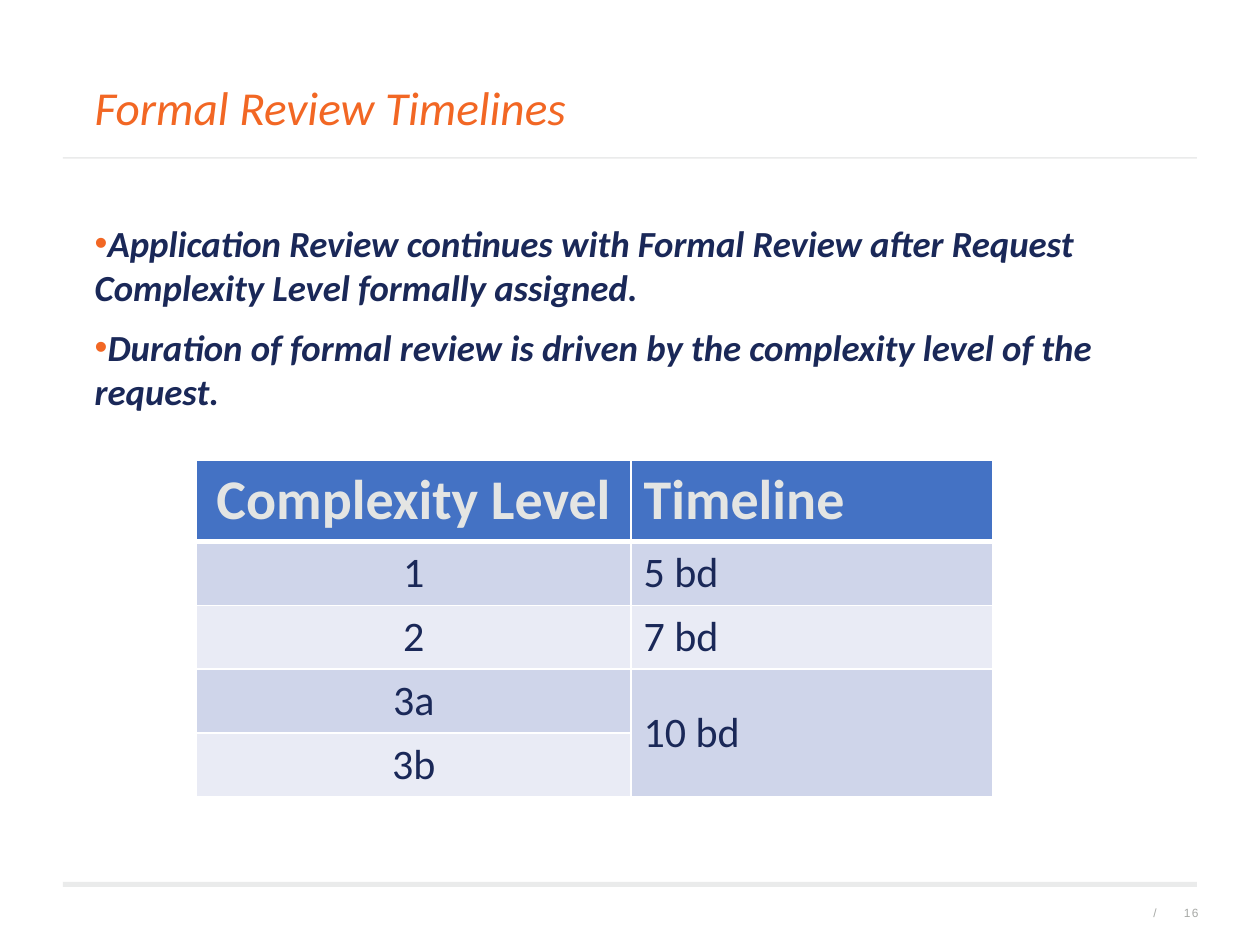
from lxml.etree import SubElement
from pptx import Presentation
from pptx.dml.color import RGBColor
from pptx.enum.shapes import MSO_SHAPE
from pptx.enum.text import MSO_ANCHOR, MSO_AUTO_SIZE, PP_ALIGN
from pptx.oxml.ns import qn
from pptx.util import Cm, Pt

ORANGE = RGBColor(0xF2, 0x67, 0x24)
NAVY = RGBColor(0x1A, 0x28, 0x58)
RULE_GRAY = RGBColor(0xEA, 0xEB, 0xEB)
FOOTER_GRAY = RGBColor(0xA7, 0xA9, 0xA6)
HEADER_BLUE = RGBColor(0x44, 0x72, 0xC4)
HEADER_TEXT = RGBColor(0xE4, 0xE5, 0xE3)
BAND_DARK = RGBColor(0xCF, 0xD5, 0xEA)
BAND_LIGHT = RGBColor(0xE9, 0xEB, 0xF5)
WHITE = RGBColor(0xFF, 0xFF, 0xFF)

REVIEW_POINTS = [
    "Application Review continues with Formal Review after Request "
    "Complexity Level formally assigned.",
    "Duration of formal review is driven by the complexity level of the request.",
]
TIMELINES = [
    ("Complexity Level", "Timeline"),
    ("1", "5 bd"),
    ("2", "7 bd"),
    ("3a", "10 bd"),
    ("3b", ""),
]


def write(paragraph, text, *, size, color, font="Calibri", bold=False, italic=False,
          align=PP_ALIGN.LEFT, before=0, after=0, tracking=None):
    paragraph.alignment = align
    paragraph.space_before, paragraph.space_after = Pt(before), Pt(after)
    run = paragraph.add_run()
    run.text = text
    run.font.name, run.font.size = font, Pt(size)
    run.font.bold, run.font.italic = bold, italic
    run.font.color.rgb = color
    if tracking:
        run.font._element.set("spc", str(round(tracking * 100)))


def prepare_frame(shape, anchor):
    """Strip the insets and autofit, and return the text frame."""
    frame = shape.text_frame
    frame.margin_left = frame.margin_right = frame.margin_top = frame.margin_bottom = 0
    frame.auto_size = MSO_AUTO_SIZE.NONE
    frame.word_wrap = True
    frame.vertical_anchor = anchor
    return frame


def place(shape, left, top, width, height):
    shape.left, shape.top, shape.width, shape.height = left, top, width, height


def add_rule(slide, left, top, width, height):
    rule = slide.shapes.add_shape(MSO_SHAPE.RECTANGLE, left, top, width, height)
    rule.shadow.inherit = False
    rule.fill.solid()
    rule.fill.fore_color.rgb = RULE_GRAY
    rule.line.fill.background()


def add_bullet(paragraph, color):
    properties = paragraph._p.get_or_add_pPr()
    properties.set("marL", "0")
    properties.set("indent", str(-Cm(0.48)))
    bullet_color = SubElement(properties, qn("a:buClr"))
    SubElement(bullet_color, qn("a:srgbClr"), val=str(color))
    SubElement(properties, qn("a:buFont"), typeface="Arial")
    SubElement(properties, qn("a:buChar"), char="•")


def set_borders(cell, top, bottom):
    properties = cell._tc.get_or_add_tcPr()
    for side, width in (("L", 1), ("R", 1), ("T", top), ("B", bottom)):
        border = SubElement(properties, qn(f"a:ln{side}"), w=str(Pt(width)))
        fill = SubElement(border, qn("a:solidFill"))
        SubElement(fill, qn("a:srgbClr"), val=str(WHITE))


def fill_title(slide, left, top, width, height):
    """Title with the thin rule that closes the heading."""
    title = slide.shapes.title
    place(title, left + Cm(0.64), top, Cm(16.51), Cm(1.55))
    frame = prepare_frame(title, MSO_ANCHOR.MIDDLE)
    write(frame.paragraphs[0], "Formal Review Timelines",
          size=27, color=ORANGE, italic=True)
    add_rule(slide, left, top + height, width, Cm(0.03))


def fill_review_points(slide, left, top, width, height):
    body = slide.placeholders[1]
    place(body, left, top, width, height)
    frame = prepare_frame(body, MSO_ANCHOR.TOP)
    for index, point in enumerate(REVIEW_POINTS):
        paragraph = frame.add_paragraph() if index else frame.paragraphs[0]
        add_bullet(paragraph, ORANGE)
        write(paragraph, point, size=21, color=NAVY, bold=True, italic=True,
              before=4.5 if index else 0, after=4.5)


def add_timeline_table(slide, left, top, width, height):
    header_height = Cm(1.6)
    row_height = (height - header_height) // (len(TIMELINES) - 1)
    level_width = Cm(8.76)
    table = slide.shapes.add_table(len(TIMELINES), 2, left, top, width, height).table
    table.columns[0].width = level_width
    table.columns[1].width = width - level_width
    for row, entries in enumerate(TIMELINES):
        is_header = row == 0
        table.rows[row].height = header_height if is_header else row_height
        band = HEADER_BLUE if is_header else BAND_DARK if row % 2 else BAND_LIGHT
        for column, entry in enumerate(entries):
            cell = table.cell(row, column)
            set_borders(cell, top=3 if row == 1 else 1, bottom=3 if is_header else 1)
            cell.fill.solid()
            cell.fill.fore_color.rgb = band
            if entry:
                write(cell.text_frame.paragraphs[0], entry,
                      size=32 if is_header else 24,
                      color=HEADER_TEXT if is_header else NAVY, bold=is_header,
                      align=PP_ALIGN.LEFT if column else PP_ALIGN.CENTER)
    shared_timeline = table.cell(3, 1)
    shared_timeline.merge(table.cell(4, 1))
    shared_timeline.vertical_anchor = MSO_ANCHOR.MIDDLE


def add_footer(slide, left, top, width):
    """Thick rule with the page mark below its right end."""
    add_rule(slide, left, top, width, Cm(0.1))
    mark_width = Cm(0.96)
    number_left = left + width - mark_width + Cm(0.03)
    for mark, mark_left in (("/", number_left - Cm(0.84)), ("16", number_left)):
        box = slide.shapes.add_textbox(mark_left, top + Cm(0.33), mark_width, Cm(0.64))
        frame = prepare_frame(box, MSO_ANCHOR.MIDDLE)
        frame.paragraphs[0].line_spacing = 0.8
        write(frame.paragraphs[0], mark, size=6.8, color=FOOTER_GRAY, font="Arial",
              align=PP_ALIGN.RIGHT, after=4.5, tracking=0.8)


def main():
    presentation = Presentation()
    presentation.slide_width, presentation.slide_height = Cm(25.4), Cm(19.05)
    slide = presentation.slides.add_slide(presentation.slide_layouts[1])
    margin, content_width = Cm(1.27), Cm(22.86)
    fill_title(slide, margin, Cm(1.37), content_width, Cm(1.8))
    fill_review_points(slide, Cm(1.91), Cm(4.45), Cm(22.22), Cm(12.7))
    add_timeline_table(slide, Cm(3.96), Cm(9.28), Cm(16.05), Cm(6.7))
    add_footer(slide, margin, Cm(17.78), content_width)
    presentation.save("out.pptx")


if __name__ == "__main__":
    main()
